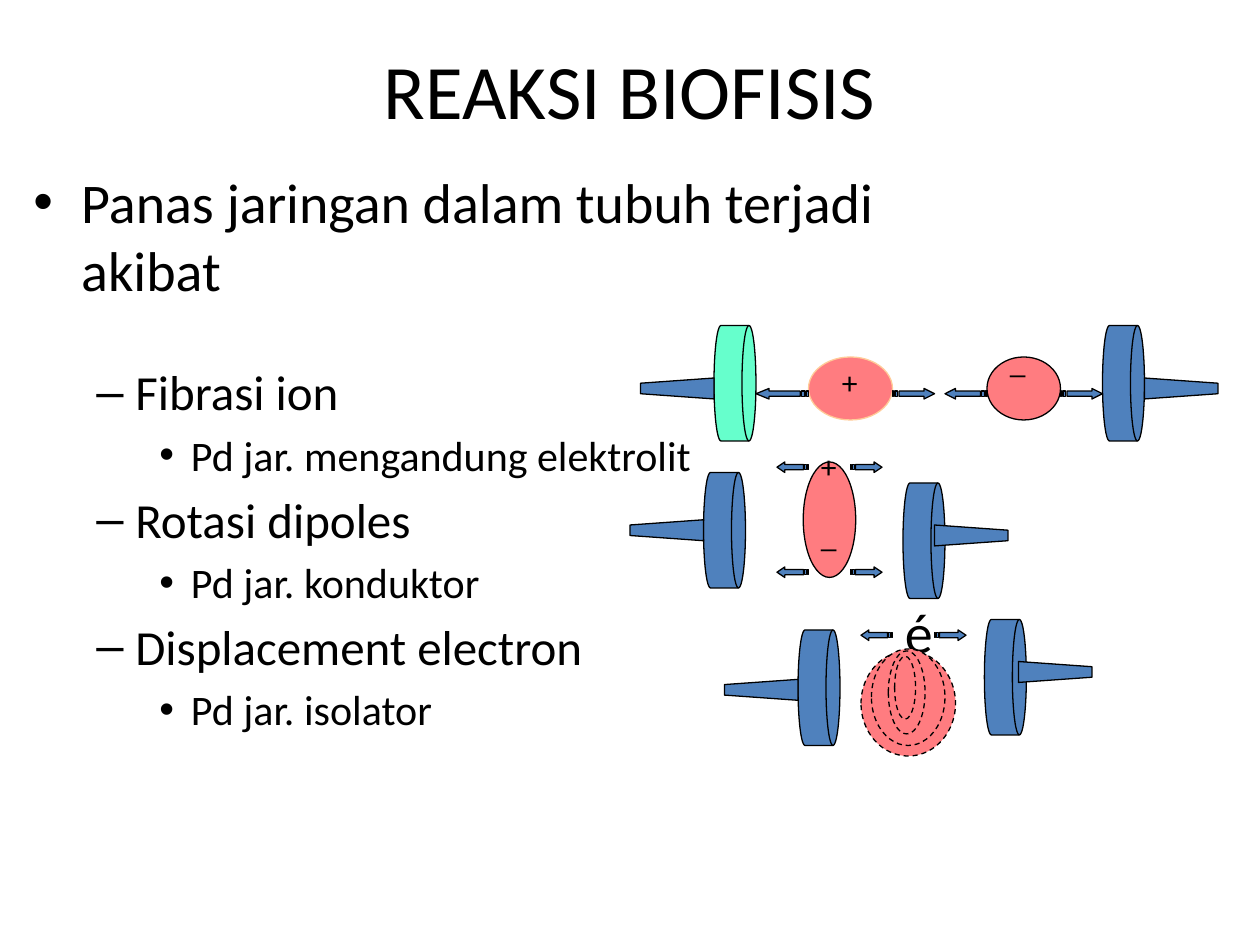
import pptx
import pptx.util
import pptx.dml.color
import pptx.enum.dml
import pptx.enum.shapes
import pptx.enum.text
import pptx.oxml

SHAPE = pptx.enum.shapes.MSO_SHAPE
ALIGN = pptx.enum.text.PP_ALIGN
ANCHOR = pptx.enum.text.MSO_ANCHOR
DASH = pptx.enum.dml.MSO_LINE.DASH
Pt = pptx.util.Pt
BLACK, BLUE, PINK, MINT, SAND = "000000", "4F81BD", "FF7C80", "66FFCC", "FFCC99"

# level: bullet, left indent, hanging indent (inches), text size
LEVELS = [("•", 0.38, 0.38, 32), ("–", 0.81, 0.31, 28), ("•", 1.25, 0.25, 24)]
# level, space before in points, text
ITEMS = [
    (0, 0, "Panas jaringan dalam tubuh terjadi akibat"),
    (1, 34, "Fibrasi ion"),
    (2, 4.8, "Pd jar. mengandung elektrolit"),
    (1, 5.6, "Rotasi dipoles"),
    (2, 4.8, "Pd jar. konduktor"),
    (1, 5.6, "Displacement electron"),
    (2, 4.8, "Pd jar. isolator"),
]


def cell(num):
    """Grid units to EMU: the slide is 120 columns by 90 rows."""
    return pptx.util.Inches(num / 12)


def tint(code):
    return pptx.dml.color.RGBColor.from_string(code)


def style(item, fill, line=BLACK, dash=None):
    item.shadow.inherit = False
    item.fill.solid()
    item.fill.fore_color.rgb = tint(fill)
    item.line.color.rgb = tint(line)
    for key, val in {"width": Pt(0.75), "dash_style": dash}.items():
        setattr(item.line, key, val)


def solid(slide, kind, box, fill, line=BLACK, dash=None):
    item = slide.shapes.add_shape(kind, *map(cell, box))
    style(item, fill, line, dash)


def outline(slide, loops):
    """Draw one freeform from closed loops of grid points."""
    loops = [[(cell(x), cell(y)) for x, y in loop] for loop in loops]
    form = slide.shapes.build_freeform(*loops[0][0])
    for num, loop in enumerate(loops):
        if num:
            form.move_to(*loop[0])
        form.add_line_segments(loop[1:], close=True)
    style(form.convert_to_shape(), BLUE)


def arrow(slide, x, y, span):
    """Striped arrow, one row high; a negative span points left."""
    def at(part, row):
        return x + span * part, y + row

    def stripe(near, far):
        return [at(near, .25), at(near, .75), at(far, .75), at(far, .25)]

    head = [at(.75, 0), at(.75, .25), at(5 / 32, .25), at(5 / 32, .75),
            at(.75, .75), at(.75, 1), at(1, .5)]
    outline(slide, [head, stripe(1 / 16, 1 / 8), stripe(0, 1 / 32)])


def handle(slide, x, y, span):
    """Tapered rod whose wide end is centred on x, y."""
    outline(slide, [[(x, y - 1), (x + span, y - .5),
                     (x + span, y + .5), (x, y + 1)]])


def frame(slide, box, anchor=ANCHOR.TOP):
    text = slide.shapes.add_textbox(*map(cell, box)).text_frame
    for key, val in {"word_wrap": True, "vertical_anchor": anchor}.items():
        setattr(text, key, val)
    return text


def write(para, text, size, align=ALIGN.LEFT):
    run = para.add_run()
    run.text = text
    para.alignment = align
    for key, val in {"name": "Calibri", "size": Pt(size)}.items():
        setattr(run.font, key, val)
    run.font.color.rgb = tint(BLACK)


def label(slide, box, text, size=18, align=ALIGN.LEFT, anchor=ANCHOR.TOP):
    write(frame(slide, box, anchor).paragraphs[0], text, size, align)


def outlined(slide, box):
    """Fill the bulleted list."""
    text = frame(slide, box)
    for num, (level, gap, words) in enumerate(ITEMS):
        para = text.add_paragraph() if num else text.paragraphs[0]
        mark, left, hang, size = LEVELS[level]
        para.level = level
        para.space_before = Pt(gap)
        prop = para._p.get_or_add_pPr()
        prop.set("marL", str(pptx.util.Inches(left)))
        prop.set("indent", str(-pptx.util.Inches(hang)))
        for tag, key, val in (("buFont", "typeface", "Arial"),
                              ("buChar", "char", mark)):
            node = pptx.oxml.parse_xml(
                '<a:%s xmlns:a="http://schemas.openxmlformats.org/'
                'drawingml/2006/main" %s="%s"/>' % (tag, key, val))
            prop.append(node)
        write(para, words, size)


def main():
    deck = pptx.Presentation()
    deck.slide_width, deck.slide_height = cell(120), cell(90)
    slide = deck.slides.add_slide(deck.slide_layouts[6])

    outlined(slide, (2, 15.4, 95, 60))
    label(slide, (9, 3, 102, 11), "REAKSI BIOFISIS", 44,
          ALIGN.CENTER, ANCHOR.MIDDLE)

    for box, line in (((77, 34, 8, 6), SAND), ((94, 34, 7, 6), BLACK),
                      ((76.5, 44, 5, 11), BLACK)):
        solid(slide, SHAPE.OVAL, box, PINK, line)
    for x, y, sign in ((79, 34, "+"), (95, 32, "_"),
                       (77, 42, "+"), (77, 48.6, "_")):
        label(slide, (x, y, 6, 6), sign)
    label(slide, (85, 56.3, 6, 7.5), "é", 32)

    for x, y, fill in ((68, 31, MINT), (105, 31, BLUE), (67, 45, BLUE),
                       (86, 46, BLUE), (76, 60, BLUE), (93.75, 59, BLUE)):
        solid(slide, SHAPE.FLOWCHART_DIRECT_ACCESS_STORAGE,
              (x, y, 4, 11), fill)
    for x, y, way in ((89, 51, 1), (97, 64, 1), (109, 37, 1),
                      (67, 50.5, -1), (76, 65.7, -1), (68, 37, -1)):
        handle(slide, x, y, 7 * way)

    for x, span in ((85, 4), (77, -5), (94, -4), (101, 4)):
        arrow(slide, x, 37, span)
    for x, y in ((77, 44), (77, 54), (85, 60)):
        arrow(slide, x, y, -3)
        arrow(slide, x + 4, y, 3)

    for box in ((82, 62, 9, 10), (83, 61.8, 7, 9.2),
                (84.6, 62, 3.5, 7.9), (85.2, 62.5, 2, 6)):
        solid(slide, SHAPE.OVAL, box, PINK, dash=DASH)
    deck.save("out.pptx")


if __name__ == "__main__":
    main()
